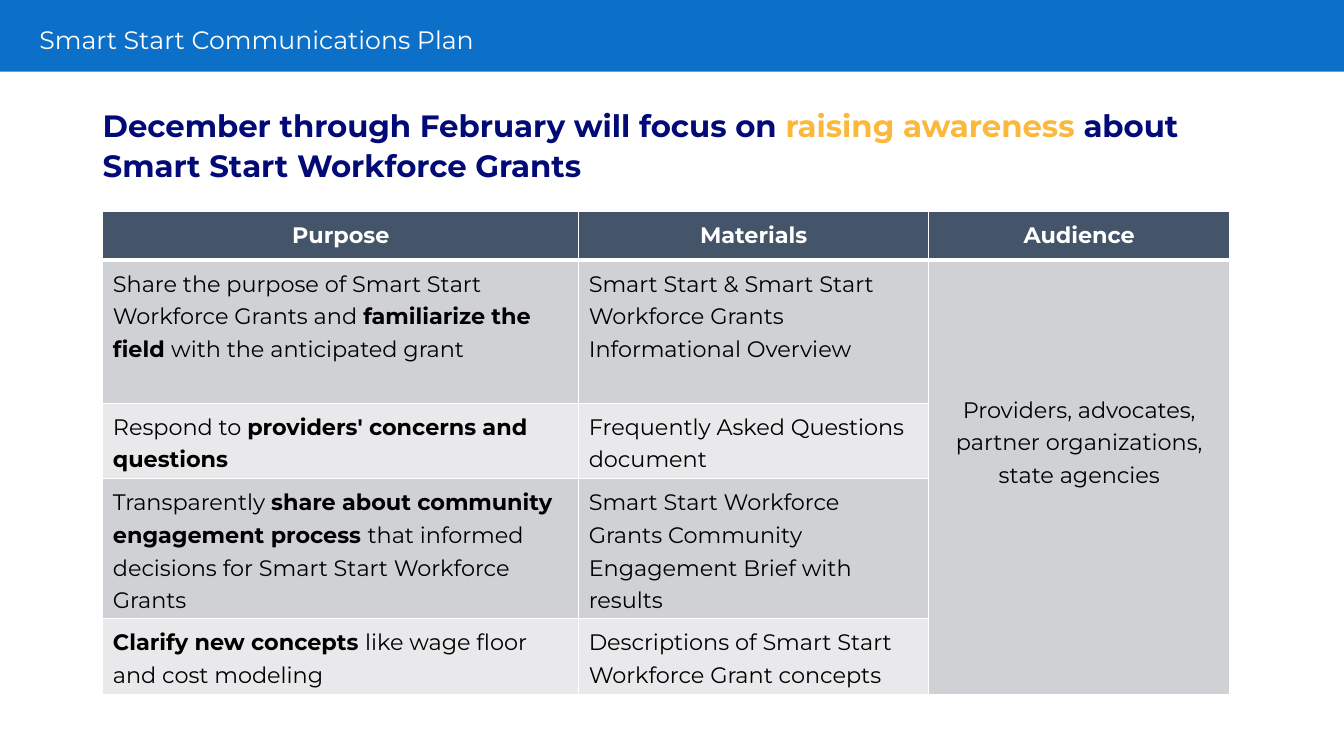
"""Build the Smart Start communications plan slide."""
from lxml import etree
from pptx import Presentation
from pptx.dml.color import RGBColor
from pptx.enum.shapes import MSO_SHAPE
from pptx.enum.text import MSO_ANCHOR, MSO_AUTO_SIZE, PP_ALIGN
from pptx.oxml.ns import qn
from pptx.util import Inches, Pt

RECT = MSO_SHAPE.RECTANGLE
MIDDLE = MSO_ANCHOR.MIDDLE
LEFT, CENTER = PP_ALIGN.LEFT, PP_ALIGN.CENTER
NO_FIT = MSO_AUTO_SIZE.NONE
FONT = "Montserrat"
COLORS = {
    "bar": "0C70C8", "white": "FFFFFF", "navy": "020A78", "gold": "FBB83A",
    "header": "445469", "dark_band": "CFD1D4", "light_band": "E9E9EB", "black": "000000",
}


def add_run(p, text, size, color, bold=False):
    r = p.add_run()
    r.text = text
    r.font.name = FONT
    r.font.size = Pt(size)
    r.font.bold = bold
    r.font.color.rgb = RGBColor.from_string(COLORS[color])


def style_cell(cell, fill, bottom_width):
    tc_pr = cell._tc.get_or_add_tcPr()
    for side, width in (("L", 1), ("R", 1), ("T", 1), ("B", bottom_width)):
        ln = etree.SubElement(tc_pr, qn(f"a:ln{side}"), w=str(Pt(width)))
        solid = etree.SubElement(ln, qn("a:solidFill"))
        etree.SubElement(solid, qn("a:srgbClr"), val=COLORS["white"])
    cell.fill.solid()
    cell.fill.fore_color.rgb = RGBColor.from_string(COLORS[fill])


prs = Presentation()
prs.slide_width = Inches(13.33)
prs.slide_height = Inches(7.5)
s = prs.slides.add_slide(prs.slide_layouts[5])

title = s.shapes.title
title.left, title.top = Inches(0.29), Inches(0.22)
title.width, title.height = Inches(7.55), Inches(0.38)
tf = title.text_frame
tf.auto_size = NO_FIT
tf.word_wrap = True
tf.vertical_anchor = MIDDLE
p = tf.paragraphs[0]
p.alignment = LEFT
p.line_spacing = 0.9
add_run(p, "Smart Start Communications Plan", 18, "white")

bar = s.shapes.add_shape(RECT, 0, 0, prs.slide_width, Inches(0.71))
bar.shadow.inherit = False
bar.fill.solid()
bar.fill.fore_color.rgb = RGBColor.from_string(COLORS["bar"])
bar.line.fill.background()
title.element.addprevious(bar.element)

heading = s.shapes.add_textbox(Inches(0.92), Inches(0.97), Inches(11.48), Inches(0.51))
tf = heading.text_frame
tf.word_wrap = True
p = tf.paragraphs[0]
p.line_spacing = 1.1
for text, color in (
    ("December through February will focus on ", "navy"),
    ("raising awareness ", "gold"),
    ("about Smart Start Workforce Grants", "navy"),
):
    add_run(p, text, 22, color, True)

HEADERS = ["Purpose", "Materials", "Audience"]
AUDIENCE = "Providers, advocates, partner organizations, state agencies"
PLAN = [
    ([("Share the purpose of Smart Start Workforce Grants and ", False),
      ("familiarize the field ", True),
      ("with the anticipated grant", False)],
     "Smart Start & Smart Start Workforce Grants Informational Overview"),
    ([("Respond to ", False),
      ("providers' concerns and questions", True)],
     "Frequently Asked Questions document"),
    ([("Transparently ", False),
      ("share about community engagement process ", True),
      ("that informed decisions for Smart Start Workforce Grants", False)],
     "Smart Start Workforce Grants Community Engagement Brief with results"),
    ([("Clarify new concepts ", True),
      ("like wage floor and cost modeling", False)],
     "Descriptions of Smart Start Workforce Grant concepts"),
]
COL_WIDTHS = [4.72, 3.47, 2.99]
ROW_HEIGHTS = [0.48, 1.42, 0.75, 1.39, 0.75]

table = s.shapes.add_table(
    len(ROW_HEIGHTS), len(COL_WIDTHS), Inches(1.02), Inches(2.1),
    Inches(sum(COL_WIDTHS)), Inches(sum(ROW_HEIGHTS))).table
for column, width in zip(table.columns, COL_WIDTHS):
    column.width = Inches(width)
for row, height in zip(table.rows, ROW_HEIGHTS):
    row.height = Inches(height)

for col, text in enumerate(HEADERS):
    cell = table.cell(0, col)
    style_cell(cell, "header", 3)
    cell.vertical_anchor = MIDDLE
    p = cell.text_frame.paragraphs[0]
    p.alignment = CENTER
    add_run(p, text, 16, "white", True)

for row, (purpose, materials) in enumerate(PLAN, start=1):
    band = "dark_band" if row % 2 else "light_band"
    for col, runs in enumerate((purpose, [(materials, False)])):
        cell = table.cell(row, col)
        style_cell(cell, band, 1)
        p = cell.text_frame.paragraphs[0]
        p.line_spacing = 1.2
        for text, bold in runs:
            add_run(p, text, 16, "black", bold)
    style_cell(table.cell(row, 2), "dark_band", 1)

audience = table.cell(1, 2)
audience.merge(table.cell(len(PLAN), 2))
audience.margin_top = Inches(1.3)
p = audience.text_frame.paragraphs[0]
p.alignment = CENTER
p.line_spacing = 1.2
add_run(p, AUDIENCE, 16, "black")

prs.save("out.pptx")
